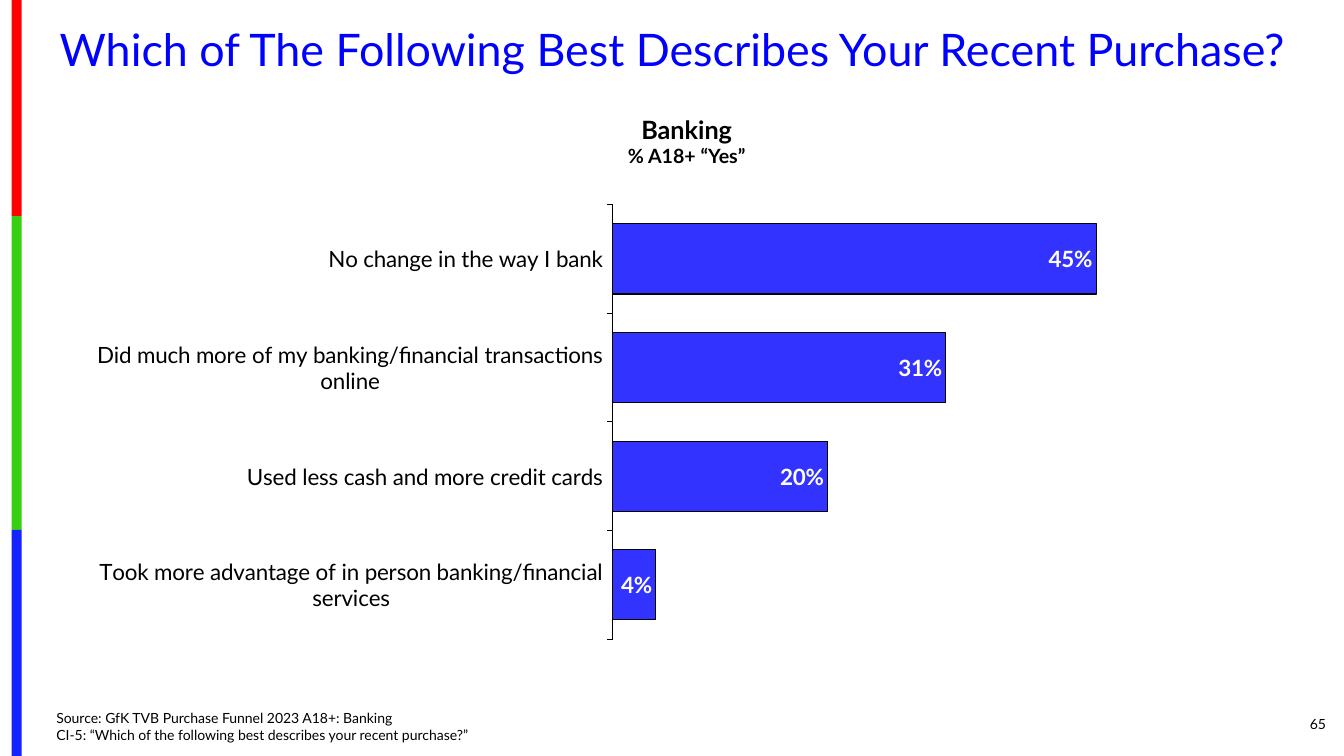
"""Build the banking survey slide with its bar chart."""
from dataclasses import dataclass
from itertools import accumulate

from lxml import etree
from pptx import Presentation
from pptx import util as u
from pptx.chart.data import CategoryChartData
from pptx.dml.color import RGBColor
from pptx.enum import chart as ch
from pptx.enum import shapes, text
from pptx.oxml import ns


@dataclass(frozen=True)
class Theme:
    font: str = "Lato"
    red: str = "FE0000"
    green: str = "36CF12"
    blue: str = "1322FE"
    title: str = "0000FF"
    bar: str = "3333FF"
    ink: str = "000000"
    paper: str = "FFFFFF"
    huge: int = 32
    head: int = 18
    label: int = 16
    sub: int = 14
    note: int = 10
    edge: float = 0.75


@dataclass(frozen=True)
class Box:
    """Place and size in percent of the slide's width and height."""
    left: float
    top: float
    wide: float
    high: float


@dataclass(frozen=True)
class Line:
    words: str
    size: int
    color: str
    bold: bool = False


@dataclass(frozen=True)
class Label:
    box: Box
    lines: tuple[Line, ...]
    align: text.PP_ALIGN
    anchor: text.MSO_ANCHOR = text.MSO_ANCHOR.MIDDLE
    wrap: bool = True
    space: float = 1.0


@dataclass(frozen=True)
class Stripe:
    color: str
    high: float


T = Theme()
WIDE, HIGH = u.Inches(13.33), u.Inches(7.5)
ALIGN, ANCHOR = text.PP_ALIGN, text.MSO_ANCHOR

STRIPES = (Stripe(T.red, 28.6), Stripe(T.green, 41.5), Stripe(T.blue, 29.9))
LABELS = (
    Label(Box(3.45, 2.93, 93.17, 7.87),
          (Line("Which of The Following Best Describes Your Recent Purchase?",
                T.huge, T.title),), ALIGN.CENTER, space=0.9),
    Label(Box(91.3, 93.07, 8.1, 5.33), (Line("65", T.note, T.ink),), ALIGN.RIGHT),
    Label(Box(3.45, 93.07, 70.9, 5.87),
          (Line("Source: GfK TVB Purchase Funnel 2023 A18+: Banking\v"
                "CI-5: “Which of the following best describes your recent purchase?”",
                T.note, T.ink),), ALIGN.LEFT, ANCHOR.BOTTOM),
    Label(Box(44.94, 14.4, 12.3, 8.53),
          (Line("Banking", T.head, T.ink, True),
           Line("% A18+ “Yes”", T.sub, T.ink, True)),
          ALIGN.CENTER, ANCHOR.TOP, wrap=False),
)
CHART = Box(5.1, 24.4, 90.02, 62.27)
PLOT = {"x": 0.45, "y": 0.043, "w": 0.444, "h": 0.923}
SHARES = {
    "No change in the way I bank": 0.45,
    "Did much more of my banking/financial transactions online": 0.31,
    "Used less cash and more credit cards": 0.2,
    "Took more advantage of in person banking/financial services": 0.04,
}


def rgb(code: str) -> RGBColor:
    return RGBColor.from_string(code)


def place(box: Box) -> tuple[int, int, int, int]:
    return (int(WIDE * box.left / 100), int(HIGH * box.top / 100),
            int(WIDE * box.wide / 100), int(HIGH * box.high / 100))


def style(font, size: int, color: str, bold: bool = False) -> None:
    font.name, font.size, font.bold = T.font, u.Pt(size), bold
    font.color.rgb = rgb(color)


def add_stripe(slide, stripe: Stripe, top: float) -> None:
    bar = slide.shapes.add_shape(shapes.MSO_SHAPE.RECTANGLE,
                                 *place(Box(0.86, top, 0.75, stripe.high)))
    bar.shadow.inherit = False
    bar.fill.solid()
    bar.fill.fore_color.rgb = rgb(stripe.color)
    bar.line.fill.background()


def add_label(slide, label: Label) -> None:
    frame = slide.shapes.add_textbox(*place(label.box)).text_frame
    frame.word_wrap = label.wrap
    frame.vertical_anchor = label.anchor
    for i, line in enumerate(label.lines):
        para = frame.add_paragraph() if i else frame.paragraphs[0]
        para.text = line.words
        para.alignment, para.line_spacing = label.align, label.space
        style(para.font, line.size, line.color, line.bold)


def fix_plot(chart) -> None:
    area = chart.plots[0]._element.getparent()
    for old in area.findall(ns.qn("c:layout")):
        area.remove(old)
    layout = etree.Element(ns.qn("c:layout"))
    manual = etree.SubElement(layout, ns.qn("c:manualLayout"))
    marks = {"layoutTarget": "inner", "xMode": "edge", "yMode": "edge", **PLOT}
    for tag, val in marks.items():
        etree.SubElement(manual, ns.qn(f"c:{tag}")).set("val", str(val))
    area.insert(0, layout)


def add_bars(slide) -> None:
    data = CategoryChartData(number_format="0%")
    data.categories = list(SHARES)
    data.add_series("Series 1", list(SHARES.values()))
    chart = slide.shapes.add_chart(ch.XL_CHART_TYPE.BAR_CLUSTERED,
                                   *place(CHART), data).chart
    chart.has_title = chart.has_legend = False
    style(chart.font, T.note, T.ink)

    cats = chart.category_axis
    cats.reverse_order = True
    cats.has_major_gridlines = False
    cats.major_tick_mark = ch.XL_TICK_MARK.OUTSIDE
    cats.minor_tick_mark = ch.XL_TICK_MARK.NONE
    cats.format.line.color.rgb = rgb(T.ink)
    cats.format.line.width = u.Pt(T.edge)
    style(cats.tick_labels.font, T.label, T.ink)

    vals = chart.value_axis
    vals.visible = vals.has_major_gridlines = False
    vals.minimum_scale, vals.maximum_scale, vals.major_unit = 0, 0.5, 0.1

    plot = chart.plots[0]
    plot.gap_width, plot.vary_by_categories = 55, False
    plot.has_data_labels = True
    tags = plot.data_labels
    tags.show_value = True
    tags.number_format, tags.number_format_is_linked = "0%", False
    tags.position = ch.XL_LABEL_POSITION.INSIDE_END
    style(tags.font, T.label, T.paper, True)

    look = plot.series[0].format
    look.fill.solid()
    look.fill.fore_color.rgb = rgb(T.bar)
    look.line.color.rgb = rgb(T.ink)
    look.line.width = u.Pt(T.edge)
    fix_plot(chart)


def main() -> None:
    deck = Presentation()
    deck.slide_width, deck.slide_height = WIDE, HIGH
    slide = deck.slides.add_slide(deck.slide_layouts[6])
    tops = accumulate((s.high for s in STRIPES), initial=0)
    for stripe, top in zip(STRIPES, tops):
        add_stripe(slide, stripe, top)
    add_bars(slide)
    for label in LABELS:
        add_label(slide, label)
    deck.save("out.pptx")


if __name__ == "__main__":
    main()
